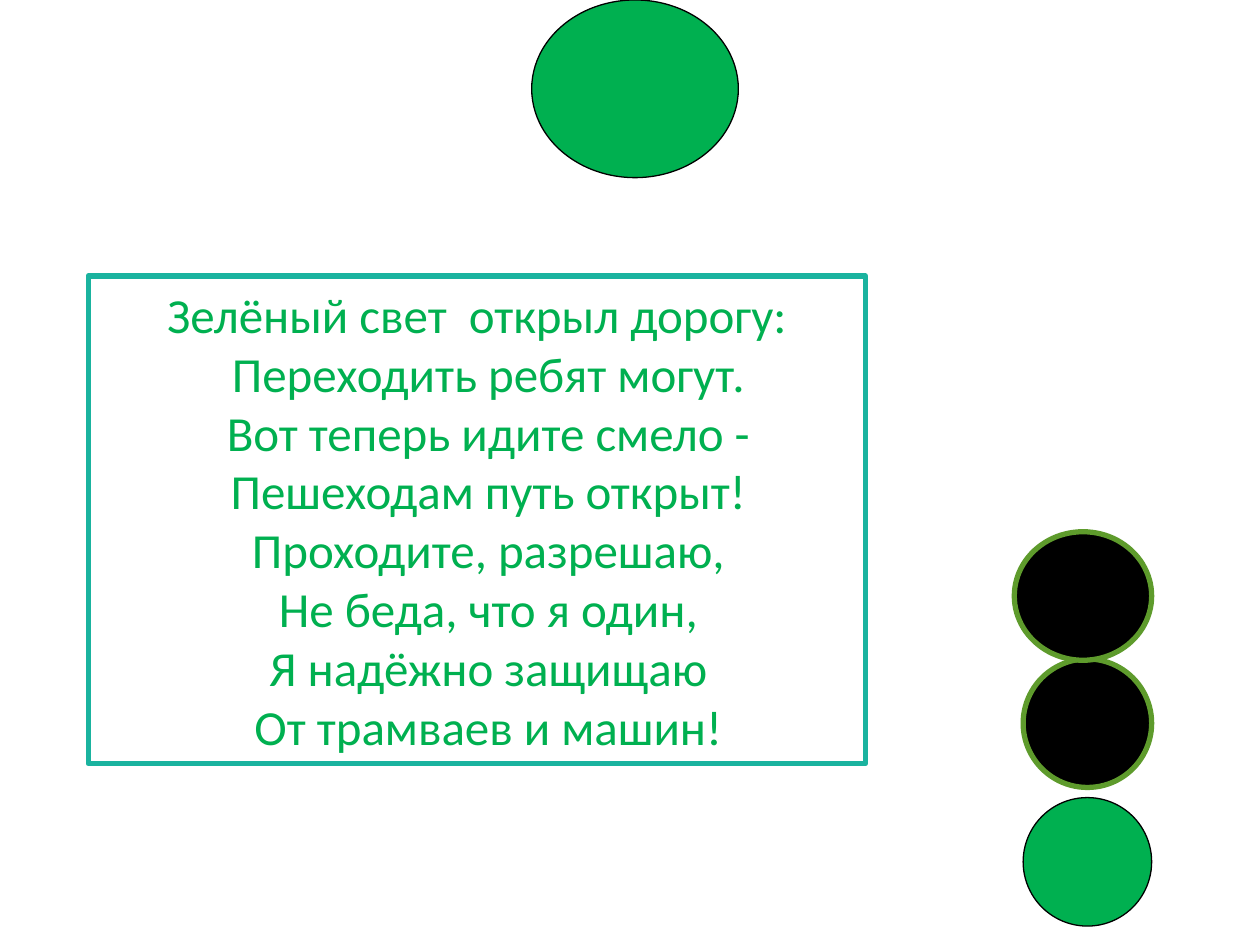
from dataclasses import dataclass

from pptx import Presentation
from pptx.dml.color import RGBColor
from pptx.enum.shapes import MSO_SHAPE
from pptx.enum.text import MSO_ANCHOR, MSO_AUTO_SIZE, PP_ALIGN
from pptx.util import Inches, Pt

WIDE, HIGH = 10, 7.5


@dataclass(frozen=True)
class Theme:
    green: str = "00B050"
    teal: str = "1AB39F"
    olive: str = "5E9B2C"
    black: str = "000000"
    white: str = "FFFFFF"
    font: str = "Calibri"
    size: int = 28
    thin: float = 0.75
    thick: float = 3


THEME = Theme()

POEM = [
    "Зелёный свет  открыл дорогу:",
    "Переходить ребят могут.",
    "Вот теперь идите смело -",
    "Пешеходам путь открыт!",
    "Проходите, разрешаю,",
    "Не беда, что я один,",
    "Я надёжно защищаю",
    "От трамваев и машин!",
]


def add_form(slide, kind, box, fill, edge, width):
    """Add a preset shape; box is left, top, width, height in inches."""
    form = slide.shapes.add_shape(kind, *(Inches(v) for v in box))
    form.shadow.inherit = False
    form.fill.solid()
    form.fill.fore_color.rgb = RGBColor.from_string(fill)
    form.line.color.rgb = RGBColor.from_string(edge)
    form.line.width = Pt(width)
    return form


def add_lamp(slide, box, lit):
    """Add one round lamp, green when lit and black when off."""
    if lit:
        look = MSO_SHAPE.FLOWCHART_CONNECTOR, box, THEME.green, THEME.black, THEME.thin
    else:
        look = MSO_SHAPE.OVAL, box, THEME.black, THEME.olive, THEME.thick
    add_form(slide, *look)


def write(frame, lines, size=THEME.size, color=THEME.black,
          align=PP_ALIGN.LEFT, inset=0):
    """Fill a frame with lines; inset is the left margin after the first."""
    frame.word_wrap = True
    for i, line in enumerate(lines):
        para = frame.add_paragraph() if i else frame.paragraphs[0]
        para.alignment = align
        if i and inset:
            para._p.get_or_add_pPr().set("marL", str(Inches(inset)))
        run = para.add_run()
        run.text = line
        run.font.name = THEME.font
        run.font.size = Pt(size)
        run.font.color.rgb = RGBColor.from_string(color)


def add_poem(slide):
    """Add the framed verse."""
    card = add_form(slide, MSO_SHAPE.RECTANGLE, (0.7, 2.19, 6.17, 3.87),
                    THEME.white, THEME.teal, THEME.thick)
    frame = card.text_frame
    frame.vertical_anchor = MSO_ANCHOR.MIDDLE
    frame.auto_size = MSO_AUTO_SIZE.SHAPE_TO_FIT_TEXT
    write(frame, POEM, color=THEME.green, align=PP_ALIGN.CENTER, inset=0.18)


def add_light(slide):
    """Stack the traffic light from the bottom lamp up."""
    right, side = 9.14, 1.02
    for top, width, lit in ((6.33, side, True), (5.23, side, False),
                            (4.22, 1.09, False)):
        add_lamp(slide, (right - width, top, width, side), lit)


def main():
    deck = Presentation()
    deck.slide_width, deck.slide_height = Inches(WIDE), Inches(HIGH)
    slide = deck.slides.add_slide(deck.slide_layouts[6])
    add_poem(slide)
    add_light(slide)
    # Large lamp at the top edge
    add_lamp(slide, (4.22, 0, 1.64, 1.41), True)
    deck.save("out.pptx")


if __name__ == "__main__":
    main()
